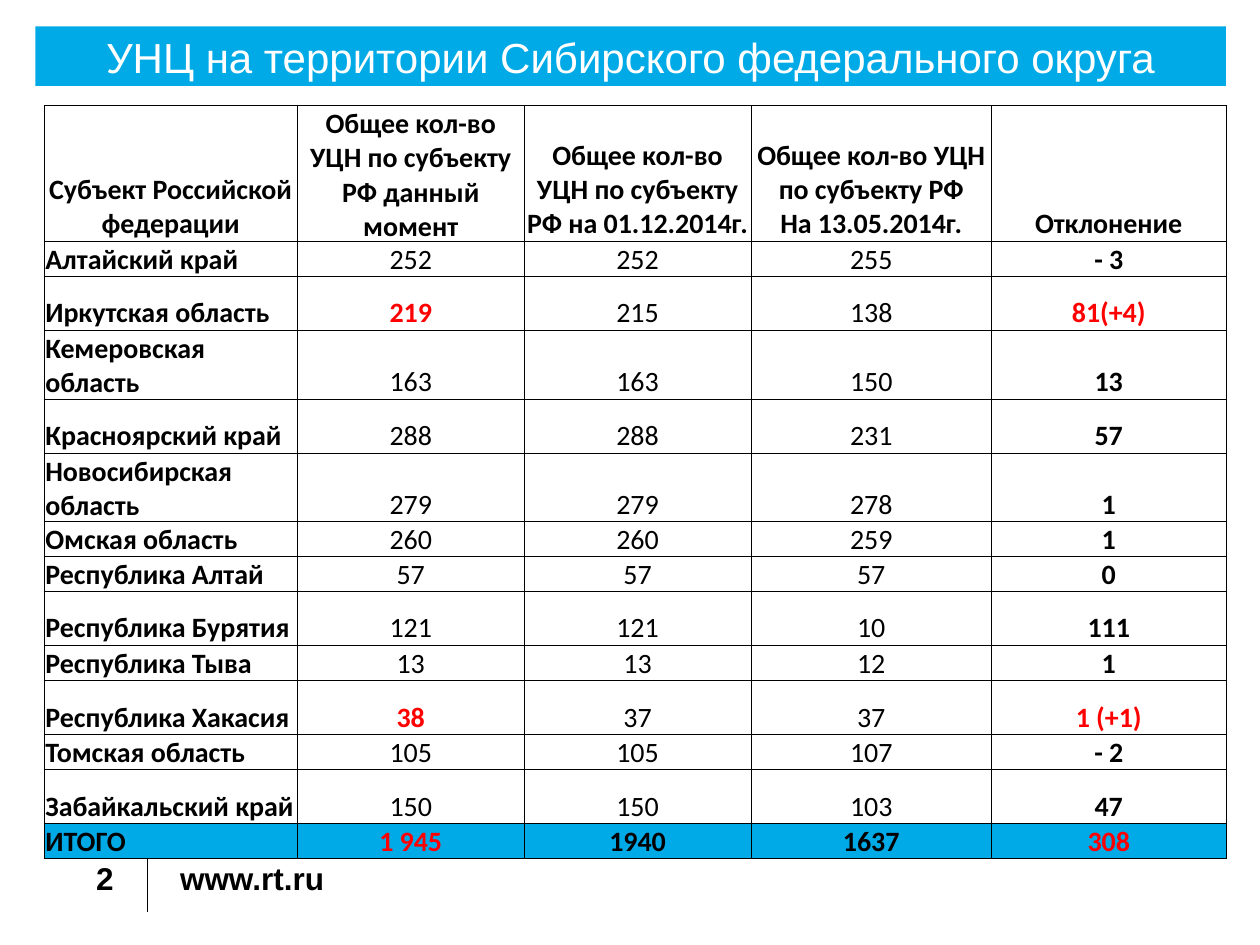
from lxml import etree
from pptx import Presentation
from pptx.dml.color import RGBColor
from pptx.enum.shapes import MSO_CONNECTOR
from pptx.enum.text import MSO_ANCHOR, PP_ALIGN
from pptx.oxml.ns import qn
from pptx.util import Inches, Pt

STRAIGHT = MSO_CONNECTOR.STRAIGHT
TOP, MIDDLE, BOTTOM = MSO_ANCHOR.TOP, MSO_ANCHOR.MIDDLE, MSO_ANCHOR.BOTTOM
LEFT, CENTER, RIGHT, JUSTIFY = PP_ALIGN.LEFT, PP_ALIGN.CENTER, PP_ALIGN.RIGHT, PP_ALIGN.JUSTIFY

COLORS = {"text": "000000", "accent": "00AAE7", "changed": "FF0000", "white": "FFFFFF"}

TITLE = "УНЦ на территории Сибирского федерального округа"
HEADER = [
    "Субъект Российской федерации",
    "Общее кол-во УЦН по субъекту РФ данный момент",
    "Общее кол-во УЦН по субъекту РФ на 01.12.2014г.",
    "Общее кол-во УЦН по субъекту РФ\nНа 13.05.2014г.",
    "Отклонение",
]
REGIONS = [
    ["Алтайский край", "252", "252", "255", "- 3"],
    ["Иркутская область", "219", "215", "138", "81(+4)"],
    ["Кемеровская область", "163", "163", "150", "13"],
    ["Красноярский край", "288", "288", "231", "57"],
    ["Новосибирская область", "279", "279", "278", "1"],
    ["Омская область", "260", "260", "259", "1"],
    ["Республика Алтай", "57", "57", "57", "0"],
    ["Республика Бурятия", "121", "121", "10", "111"],
    ["Республика Тыва", "13", "13", "12", "1"],
    ["Республика Хакасия", "38", "37", "37", "1 (+1)"],
    ["Томская область", "105", "105", "107", "- 2"],
    ["Забайкальский край", "150", "150", "103", "47"],
]
TOTAL = ["ИТОГО", "1 945", "1940", "1637", "308"]
CHANGED_ROWS = {"Иркутская область", "Республика Хакасия", "ИТОГО"}
CHANGED_COLS = {1, 4}
COL_WIDTHS = [2.01, 1.8, 1.8, 1.91, 1.86]
SHORT_ROW, TALL_ROW = 0.22, 0.43
SHORT_REGIONS = {"Алтайский край", "Омская область", "Республика Алтай",
                 "Республика Тыва", "Томская область"}


def rgb(name):
    return RGBColor.from_string(COLORS[name])


def set_attrs(obj, values):
    for name, value in values.items():
        setattr(obj, name, value)


def write(tf, text, align, color="text", anchor=TOP, inset=0, **font):
    set_attrs(tf, {"word_wrap": True, "vertical_anchor": anchor, "margin_left": inset,
                   "margin_right": inset, "margin_top": inset, "margin_bottom": 0})
    tf.text = text
    for p in tf.paragraphs:
        set_attrs(p, {"alignment": align, "space_before": Pt(0)})
        for r in p.runs:
            set_attrs(r.font, font)
            r.font.color.rgb = rgb(color)


def add_title(slide, box):
    sp = slide.shapes.title
    set_attrs(sp, dict(zip(("left", "top", "width", "height"), box)))
    sp.fill.solid()
    sp.fill.fore_color.rgb = rgb("accent")
    write(sp.text_frame, TITLE, CENTER, "white", MIDDLE, name="Arial", size=Pt(24), bold=False)


def add_borders(cell):
    pr = cell._tc.get_or_add_tcPr()
    for i, side in enumerate(("lnL", "lnR", "lnT", "lnB")):
        ln = etree.Element(qn(f"a:{side}"), w=str(Pt(0.5)))
        fill = etree.SubElement(ln, qn("a:solidFill"))
        etree.SubElement(fill, qn("a:srgbClr"), val=COLORS["text"])
        pr.insert(i, ln)


def fill_cell(cell, text, row, col, label):
    is_header, is_total = label == HEADER[0], label == TOTAL[0]
    changed = label in CHANGED_ROWS and col in CHANGED_COLS
    align = CENTER
    if col == 0 and not is_header:
        align = LEFT if is_total else JUSTIFY
    if is_total:
        cell.fill.solid()
        cell.fill.fore_color.rgb = rgb("accent")
    else:
        cell.fill.background()
    add_borders(cell)
    write(cell.text_frame, text, align, "changed" if changed else "text", inset=Inches(0.01),
          name="Calibri", size=Pt(16),
          bold=is_header or is_total or changed or col in (0, 4))
    set_attrs(cell, {"vertical_anchor": BOTTOM, "margin_left": Inches(0.01),
                     "margin_right": Inches(0.01), "margin_top": Inches(0.01),
                     "margin_bottom": 0})


def add_region_table(slide, box):
    rows = [HEADER, *REGIONS, TOTAL]
    heights = [0.85, *(SHORT_ROW if r[0] in SHORT_REGIONS else TALL_ROW for r in REGIONS), 0.27]
    table = slide.shapes.add_table(len(rows), len(HEADER), *box).table
    table.horz_banding = False
    for column, width in zip(table.columns, COL_WIDTHS):
        column.width = Inches(width)
    for i, (values, height) in enumerate(zip(rows, heights)):
        table.rows[i].height = Inches(height)
        for j, text in enumerate(values):
            fill_cell(table.cell(i, j), text, i, j, values[0])


def add_footer(slide, box):
    left, top, width, height = box
    font = {"name": "Arial", "size": Pt(18), "bold": True}
    x = left + int(width * 0.295)
    line = slide.shapes.add_connector(STRAIGHT, x, top, x, top + height)
    line.line.width = Pt(0.5)
    line.line.color.rgb = rgb("text")
    etree.SubElement(line._element.spPr, qn("a:effectLst"))
    site = slide.shapes.add_textbox(left + int(width * 0.38), top + int(height * 0.18),
                                    int(width * 0.62), int(height * 0.59))
    write(site.text_frame, "www.rt.ru", LEFT, **font)
    number = slide.shapes.add_textbox(left, top + int(height * 0.08),
                                      int(width * 0.207), int(height * 0.78))
    write(number.text_frame, "2", RIGHT, anchor=MIDDLE, **font)


def main():
    prs = Presentation()
    prs.slide_width, prs.slide_height = Inches(10), Inches(7.5)
    w, h = prs.slide_width, prs.slide_height

    def share(left, top, width, height):
        return int(w * left), int(h * top), int(w * width), int(h * height)

    slide = prs.slides.add_slide(prs.slide_layouts[5])
    add_footer(slide, share(0.027, 0.897, 0.305, 0.068))
    add_title(slide, share(0.028, 0.028, 0.945, 0.063))
    add_region_table(slide, share(0.035, 0.112, 0.937, 0.795))
    prs.save("out.pptx")


if __name__ == "__main__":
    main()
